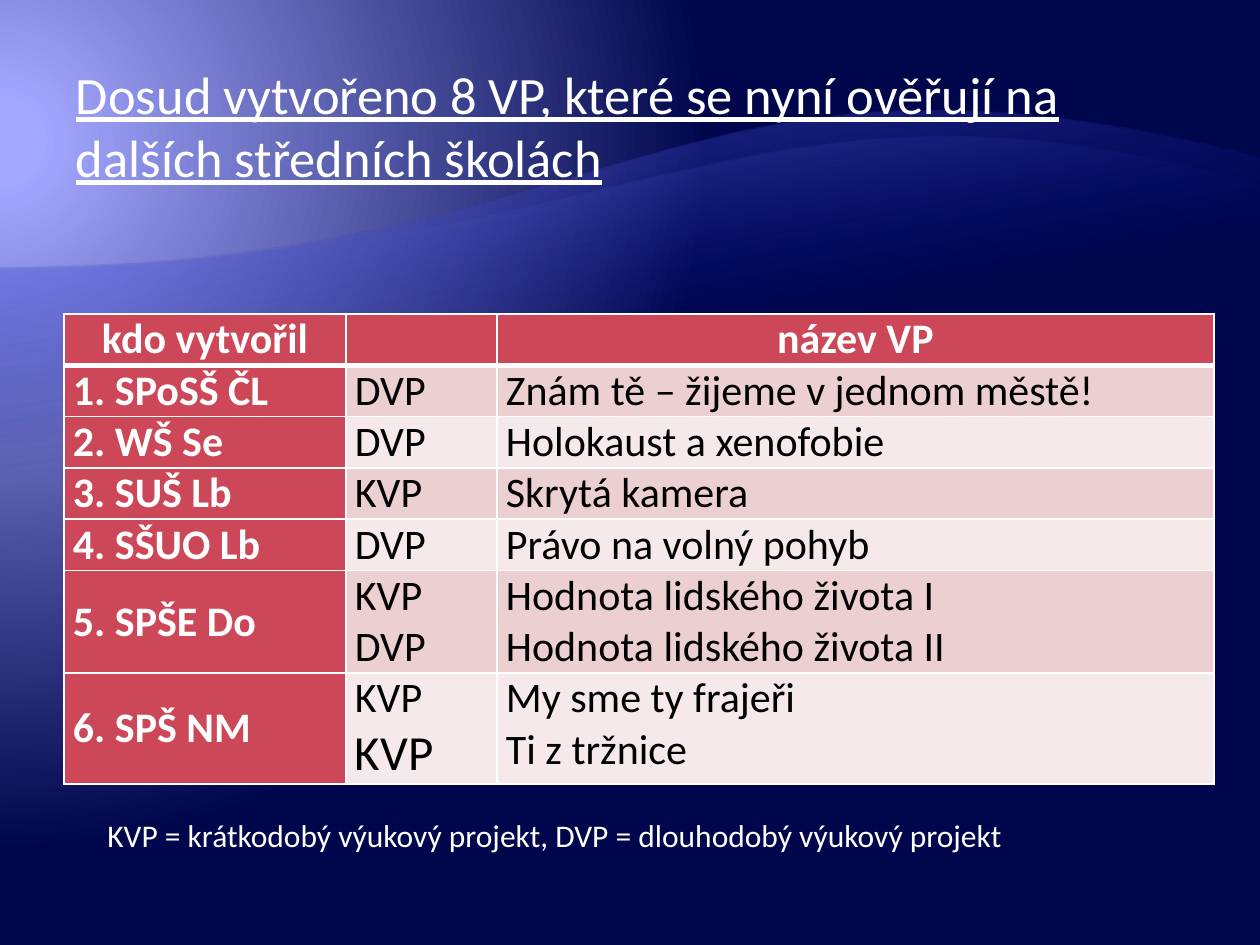
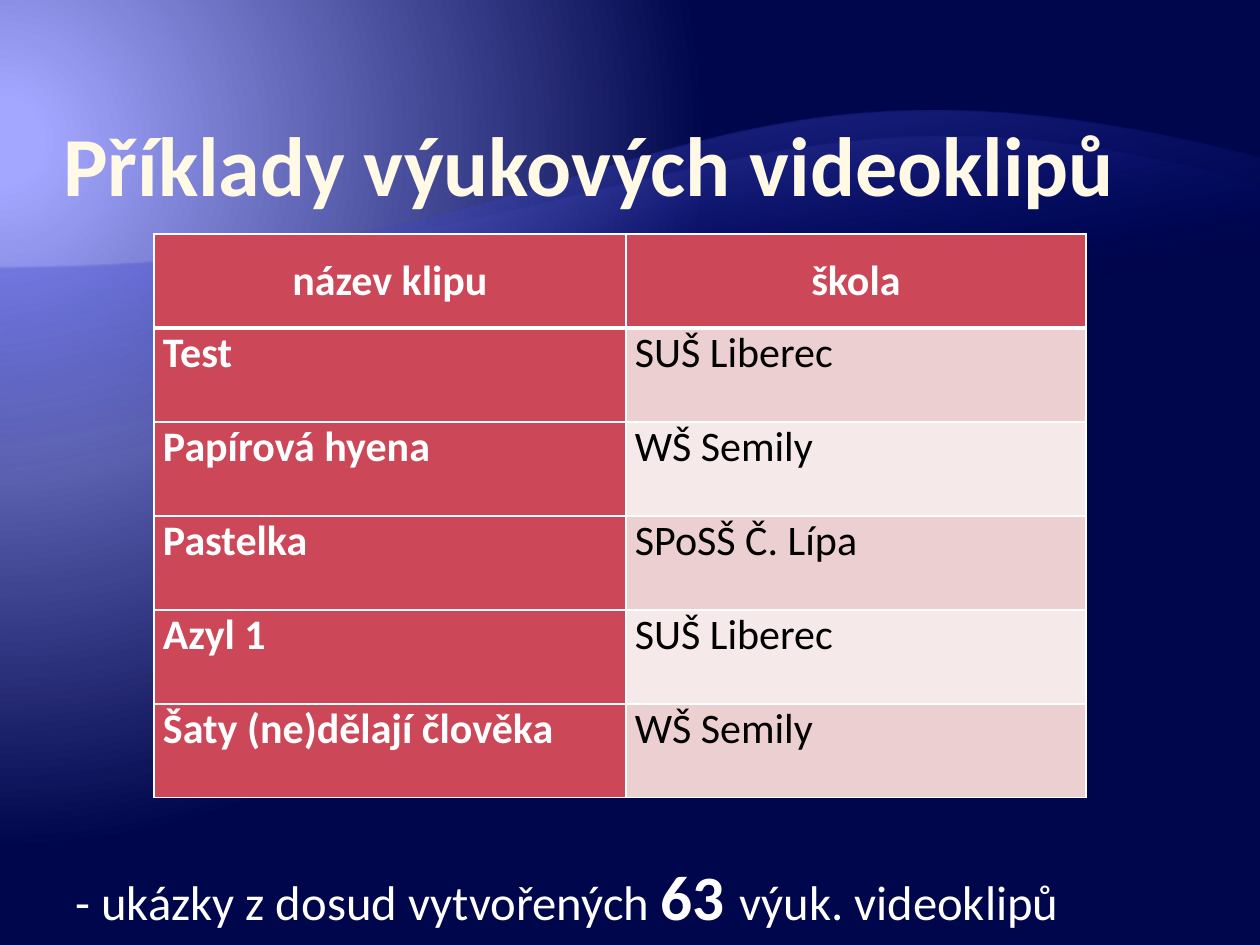
from lxml.etree import SubElement
from pptx import Presentation
from pptx.dml.color import RGBColor
from pptx.enum.text import MSO_ANCHOR as ANCHOR, PP_ALIGN as ALIGN
from pptx.oxml import parse_xml
from pptx.oxml.ns import qn
from pptx.util import Pt

PX = 7257
FONT = "Calibri"
WHITE = RGBColor(0xFF, 0xFF, 0xFF)
BLACK = RGBColor(0x00, 0x00, 0x00)
CREAM = RGBColor(0xFF, 0xF9, 0xE5)
RED = RGBColor(0xCC, 0x47, 0x57)
PINK = RGBColor(0xEC, 0xCF, 0xD1)
PALE_PINK = RGBColor(0xF6, 0xE9, 0xEA)
NIGHT = RGBColor(0x00, 0x06, 0x4B)
DEEP_BLUE = RGBColor(0x00, 0x0D, 0x9E)
VIOLET = RGBColor(0x79, 0x7F, 0xFF)
LAVENDER = RGBColor(0xA3, 0xA7, 0xFF)


def write(frame, paragraphs, size=24, color=WHITE, bold=False,
          underline=False, align=ALIGN.LEFT):
    frame.word_wrap = True
    for number, runs in enumerate(paragraphs):
        line = frame.add_paragraph() if number else frame.paragraphs[0]
        line.alignment = align
        for text, *changes in [(runs,)] if isinstance(runs, str) else runs:
            run = line.add_run()
            run.text = text
            font = run.font
            font.name = FONT
            font.size = Pt(changes[0] if changes else size)
            font.bold = changes[1] if changes[1:] else bold
            font.underline = underline
            font.color.rgb = color


def blend(fill, *stops):
    fill.gradient()
    for stop, (position, color, alpha) in zip(fill.gradient_stops, stops):
        stop.position = position
        stop.color.rgb = color
        if alpha < 100:
            tint = stop.color._xFill[0]
            SubElement(tint, qn("a:alpha"), val=str(alpha * 1000))


prs = Presentation()
prs.slide_width, prs.slide_height = 1260 * PX, 945 * PX
layout = prs.slide_layouts[5]
projects = prs.slides.add_slide(layout)
clips = prs.slides.add_slide(layout)

backdrop = prs.slide_master.background.fill
blend(backdrop, (0.05, LAVENDER, 100), (0.9, NIGHT, 100))
gradient = prs.slide_master.element.find(".//" + qn("a:gradFill"))
straight = gradient.find(qn("a:lin"))
glow = parse_xml(
    '<a:path xmlns:a="http://schemas.openxmlformats.org/drawingml/2006/main" '
    'path="circle"><a:fillToRect l="20000" t="30000" r="135000" b="100000"/></a:path>')
gradient.replace(straight, glow)

waves = [
    ([(0, 268), (630, 268), (673, 6), (1260, 158)], 924, VIOLET, 55),
    ([(0, 268), (630, 268), (753, 39), (1260, 185)], 803, LAVENDER, 30),
]
STEPS = 60
for depth, (controls, bottom, color, alpha) in enumerate(waves):
    crest = []
    for step in range(STEPS + 1):
        t = step / STEPS
        weights = [(1 - t) ** 3, 3 * t * (1 - t) ** 2, 3 * t * t * (1 - t), t ** 3]
        crest.append(tuple(int(PX * sum(w * point[axis] for w, point in zip(weights, controls)))
                           for axis in (0, 1)))
    outline = projects.shapes.build_freeform(*crest[0])
    outline.add_line_segments(crest[1:] + [(1260 * PX, bottom * PX), (0, bottom * PX)])
    wave = outline.convert_to_shape()
    wave.shadow.inherit = False
    wave.line.fill.background()
    blend(wave.fill, (0.65, DEEP_BLUE, 0), (1, color, alpha))
    wave.fill.gradient_angle = 100
    layout.shapes.element.insert(2 + depth, wave.element)

headings = [
    (projects, "Dosud vytvořeno 8 VP, které se nyní ověřují na dalších středních školách",
     (63, 56, 1134, 150), (13, 6), ANCHOR.TOP, dict(size=30, underline=True)),
    (clips, "Příklady výukových videoklipů",
     (63, 73, 1134, 141), (0, 1), ANCHOR.BOTTOM, dict(size=48, color=CREAM, bold=True)),
]
for slide, text, place, (side, edge), anchor, style in headings:
    heading = slide.shapes.title
    heading.left, heading.top, heading.width, heading.height = (n * PX for n in place)
    frame = heading.text_frame
    frame.margin_left = frame.margin_right = side * PX
    frame.margin_top = frame.margin_bottom = edge * PX
    frame.vertical_anchor = anchor
    write(frame, [text], **style)

project_rows = [
    (["kdo vytvořil"], [], ["název VP"]),
    (["1. SPoSŠ ČL"], ["DVP"], ["Znám tě – žijeme v jednom městě!"]),
    (["2. WŠ Se"], ["DVP"], ["Holokaust a xenofobie"]),
    (["3. SUŠ Lb"], ["KVP"], ["Skrytá kamera"]),
    (["4. SŠUO Lb"], ["DVP"], ["Právo na volný pohyb"]),
    (["5. SPŠE Do"], ["KVP", "DVP"], ["Hodnota lidského života I", "Hodnota lidského života II"]),
    (["6. SPŠ NM"], ["KVP", [("KVP", 28)]], ["My sme ty frajeři", "Ti z tržnice"]),
]
clip_rows = [
    (["název klipu"], ["škola"]),
    (["Test"], ["SUŠ Liberec"]),
    (["Papírová hyena"], ["WŠ Semily"]),
    (["Pastelka"], ["SPoSŠ Č. Lípa"]),
    (["Azyl 1"], ["SUŠ Liberec"]),
    (["Šaty (ne)dělají člověka"], ["WŠ Semily"]),
]
grids = [
    (projects, project_rows, (64, 314), [282, 151, 717], [51] * 5 + [102, 111],
     ANCHOR.TOP, ANCHOR.MIDDLE, ALIGN.LEFT),
    (clips, clip_rows, (154, 234), [472, 460], [94] * 6,
     ANCHOR.MIDDLE, ANCHOR.TOP, ALIGN.JUSTIFY),
]
for slide, rows, (left, top), widths, heights, head_anchor, name_anchor, align in grids:
    grid = slide.shapes.add_table(len(rows), len(widths), left * PX, top * PX,
                                  sum(widths) * PX, sum(heights) * PX).table
    for column, width in zip(grid.columns, widths):
        column.width = width * PX
    for r, (row, height) in enumerate(zip(rows, heights)):
        grid.rows[r].height = height * PX
        for c, paragraphs in enumerate(row):
            cell = grid.cell(r, c)
            cell.margin_left = cell.margin_right = 9 * PX
            cell.margin_top = cell.margin_bottom = 0
            strong = r == 0 or c == 0
            cell.vertical_anchor = (head_anchor if r == 0 else
                                    name_anchor if c == 0 else ANCHOR.TOP)
            properties = cell._tc.get_or_add_tcPr()
            for side in "LRTB":
                thick = (r, side) in [(0, "B"), (1, "T")]
                border = SubElement(properties, qn("a:ln" + side), w=str(Pt(3 if thick else 1)))
                SubElement(SubElement(border, qn("a:solidFill")), qn("a:srgbClr"), val=str(WHITE))
            cell.fill.solid()
            cell.fill.fore_color.rgb = RED if strong else PINK if r % 2 else PALE_PINK
            write(cell.text_frame, paragraphs, color=WHITE if strong else BLACK, bold=strong,
                  align=ALIGN.CENTER if r == 0 else ALIGN.LEFT if c == 0 else align)

notes = [
    (projects, (95, 810, 1062, 50), 18,
     "KVP = krátkodobý výukový projekt, DVP = dlouhodobý výukový projekt"),
    (clips, (63, 851, 1134, 88), 27.8,
     [("- ukázky z dosud vytvořených ",), ("63 ", 36.1, True), ("výuk. videoklipů",)]),
]
for slide, place, size, text in notes:
    note = slide.shapes.add_textbox(*(n * PX for n in place))
    write(note.text_frame, [text], size=size)

prs.save("out.pptx")
